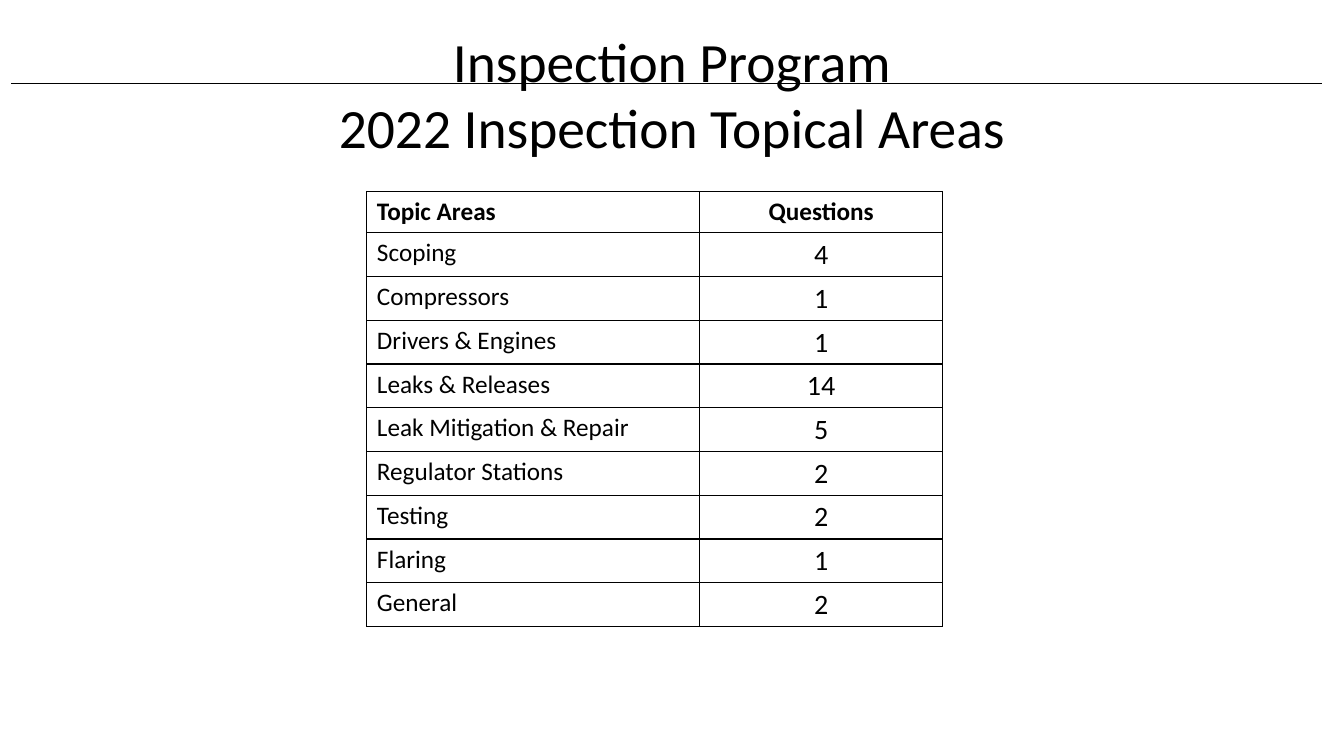
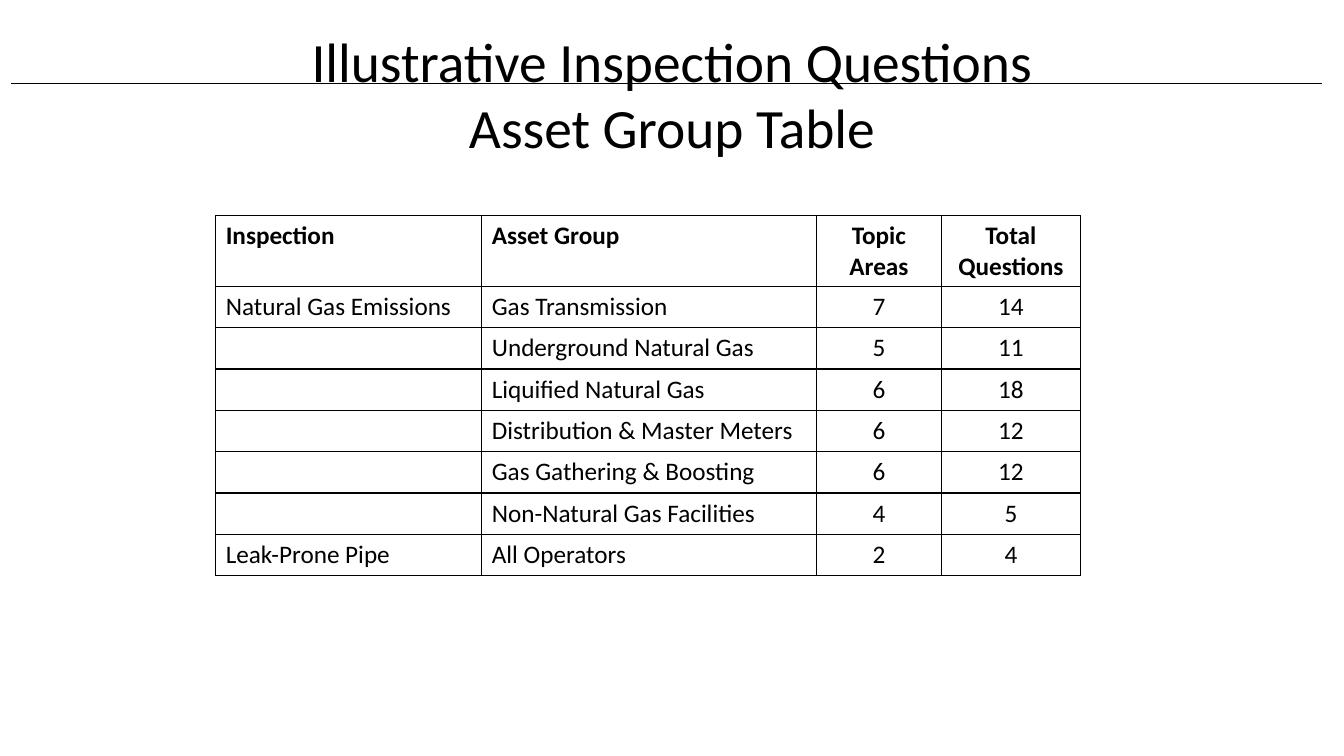
from dataclasses import dataclass
from typing import Any

import lxml.etree
import pptx
import pptx.dml.color
import pptx.enum.shapes
import pptx.enum.text
import pptx.oxml.ns
import pptx.util

ALIGN = pptx.enum.text.PP_ALIGN
INK = pptx.dml.color.RGBColor(0, 0, 0)
PAPER = pptx.dml.color.RGBColor(255, 255, 255)


@dataclass(frozen=True)
class Theme:
    font: str = "Calibri"
    ink: pptx.dml.color.RGBColor = INK
    paper: pptx.dml.color.RGBColor = PAPER
    title_size: float = 39.6
    body_size: float = 18
    count_size: float = 20
    rule_width: float = 0.75
    border_width: float = 1


@dataclass(frozen=True)
class Column:
    heading: str
    width: float
    align: Any = ALIGN.LEFT
    size: float = 18


@dataclass(frozen=True)
class TablePage:
    title: str
    left: float
    top: float
    columns: tuple[Column, ...]
    rows: tuple[tuple[str, ...], ...]


THEME = Theme()
SLIDE_WIDTH = pptx.util.Inches(13.33)
SLIDE_HEIGHT = pptx.util.Inches(7.5)
ROW_HEIGHT = 5.47
RULE_LEFT, RULE_RIGHT, RULE_TOP = 0.83, 98.35, 11.07
TITLE_LEFT, TITLE_TOP, TITLE_WIDTH, TITLE_HEIGHT = 5, 4, 90, 16.67

PAGES = (
    TablePage(
        "Inspection Program\v2022 Inspection Topical Areas",
        27.3,
        25.33,
        (
            Column("Topic Areas", 24.76),
            Column("Questions", 18.08, ALIGN.CENTER, THEME.count_size),
        ),
        (
            ("Scoping", "4"),
            ("Compressors", "1"),
            ("Drivers & Engines", "1"),
            ("Leaks & Releases", "14"),
            ("Leak Mitigation & Repair", "5"),
            ("Regulator Stations", "2"),
            ("Testing", "2"),
            ("Flaring", "1"),
            ("General", "2"),
        ),
    ),
    TablePage(
        "Illustrative Inspection Questions\vAsset Group Table",
        16.05,
        28.53,
        (
            Column("Inspection", 19.8),
            Column("Asset Group", 24.9),
            Column("Topic Areas", 9.3, ALIGN.CENTER),
            Column("Total Questions", 10.35, ALIGN.CENTER),
        ),
        (
            ("Natural Gas Emissions", "Gas Transmission", "7", "14"),
            ("", "Underground Natural Gas", "5", "11"),
            ("", "Liquified Natural Gas", "6", "18"),
            ("", "Distribution & Master Meters", "6", "12"),
            ("", "Gas Gathering & Boosting", "6", "12"),
            ("", "Non-Natural Gas Facilities", "4", "5"),
            ("Leak-Prone Pipe", "All Operators", "2", "4"),
        ),
    ),
)


def across(percent: float) -> int:
    return round(SLIDE_WIDTH * percent / 100)


def down(percent: float) -> int:
    return round(SLIDE_HEIGHT * percent / 100)


def write(frame: Any, text: str, align: Any, size: float, bold: bool = False) -> None:
    para = frame.paragraphs[0]
    para.text = text
    para.alignment = align
    formats = {"name": THEME.font, "size": pptx.util.Pt(size), "bold": bold}
    for span in para.runs:
        for name, value in formats.items():
            setattr(span.font, name, value)
        span.font.color.rgb = THEME.ink


def add_rule(page: Any) -> None:
    rule = page.shapes.add_connector(
        pptx.enum.shapes.MSO_CONNECTOR.STRAIGHT,
        across(RULE_LEFT), down(RULE_TOP), across(RULE_RIGHT), down(RULE_TOP),
    )
    rule.line.color.rgb = THEME.ink
    rule.line.width = pptx.util.Pt(THEME.rule_width)
    properties = rule._element.spPr
    lxml.etree.SubElement(properties, pptx.oxml.ns.qn("a:effectLst"))


def add_title(page: Any, title: str) -> None:
    box = page.shapes.add_textbox(
        across(TITLE_LEFT), down(TITLE_TOP), across(TITLE_WIDTH), down(TITLE_HEIGHT)
    )
    frame = box.text_frame
    formats = {"word_wrap": True, "vertical_anchor": pptx.enum.text.MSO_ANCHOR.MIDDLE}
    for name, value in formats.items():
        setattr(frame, name, value)
    write(frame, title, ALIGN.CENTER, THEME.title_size)


def style_cell(cell: Any) -> None:
    qn = pptx.oxml.ns.qn
    properties = cell._tc.get_or_add_tcPr()
    for side in ("a:lnL", "a:lnR", "a:lnT", "a:lnB"):
        width = str(pptx.util.Pt(THEME.border_width))
        border = lxml.etree.SubElement(properties, qn(side), w=width)
        fill = lxml.etree.SubElement(border, qn("a:solidFill"))
        lxml.etree.SubElement(fill, qn("a:srgbClr"), val=str(THEME.ink))
    cell.fill.solid()
    cell.fill.fore_color.rgb = THEME.paper


def add_grid(page: Any, content: TablePage) -> None:
    columns = content.columns
    lines = (tuple(column.heading for column in columns), *content.rows)
    table = page.shapes.add_table(
        len(lines), len(columns), across(content.left), down(content.top),
        across(sum(column.width for column in columns)), down(ROW_HEIGHT * len(lines)),
    ).table
    for name in ("first_row", "horz_banding"):
        setattr(table, name, False)
    for position, column in enumerate(columns):
        table.columns[position].width = across(column.width)
    for row_index, line in enumerate(lines):
        table.rows[row_index].height = down(ROW_HEIGHT)
        heading = row_index == 0
        for column_index, (text, column) in enumerate(zip(line, columns)):
            cell = table.cell(row_index, column_index)
            style_cell(cell)
            size = THEME.body_size if heading else column.size
            write(cell.text_frame, text, column.align, size, heading)


def main() -> None:
    deck = pptx.Presentation()
    deck.slide_width, deck.slide_height = SLIDE_WIDTH, SLIDE_HEIGHT
    for content in PAGES:
        page = deck.slides.add_slide(deck.slide_layouts[6])
        add_rule(page)
        add_title(page, content.title)
        add_grid(page, content)
    deck.save("out.pptx")


if __name__ == "__main__":
    main()
